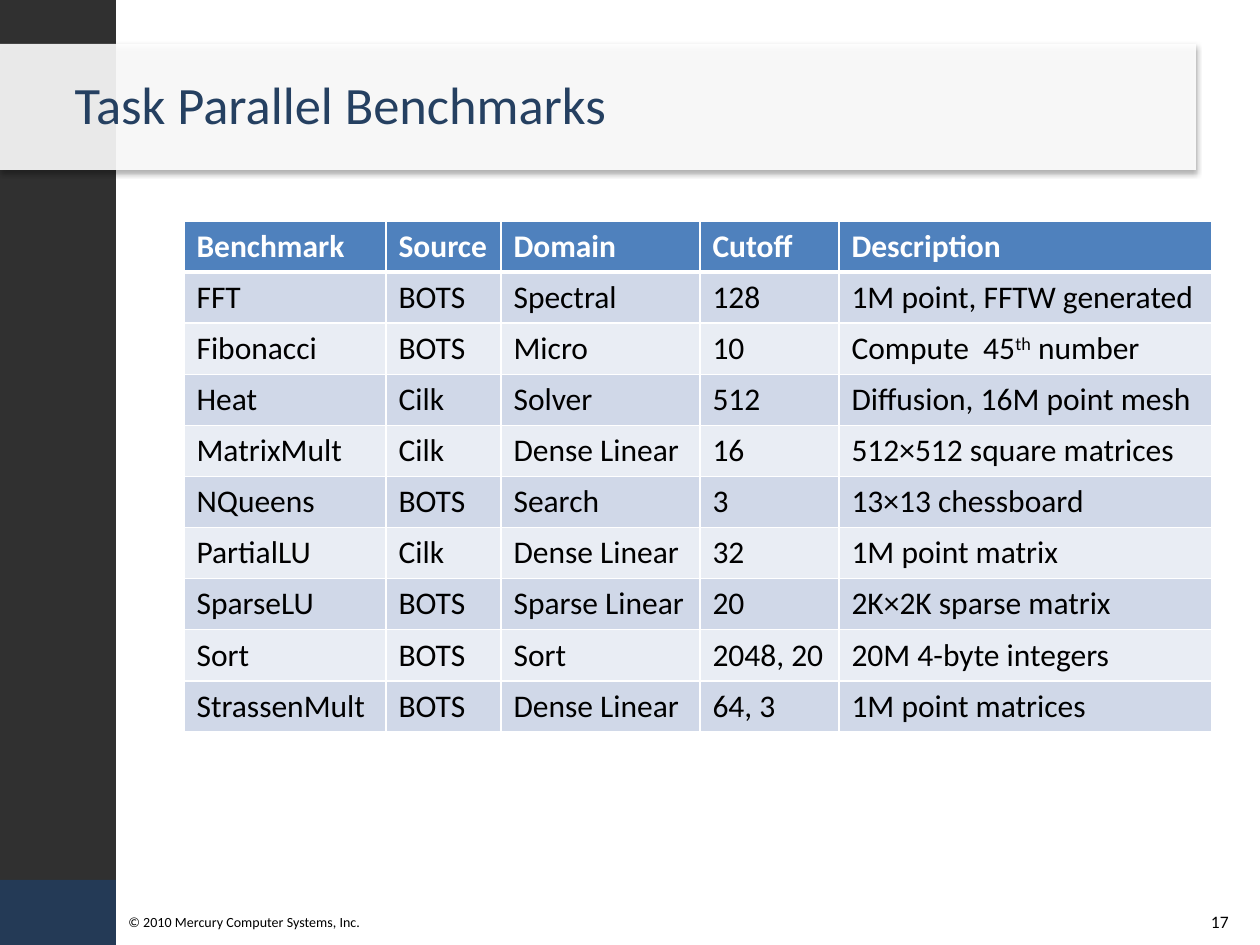
import lxml.etree
import pptx
import pptx.dml.color
import pptx.enum.shapes
import pptx.enum.text
import pptx.oxml.ns
import pptx.util

PX = 914400 / 126
FONT = "Calibri"
COLORS = {
    "white": "FFFFFF", "black": "000000", "sidebar": "303030", "corner": "243A56",
    "title": "254061", "header": "4F81BD", "odd": "D0D8E8", "even": "E9EDF4",
}
COLUMN_WIDTHS = [202, 115, 199, 139, 373]
ROW_HEIGHT = 51
SUPERSCRIPT = "th"
BENCHMARKS = [
    ["Benchmark", "Source", "Domain", "Cutoff", "Description"],
    ["FFT", "BOTS", "Spectral", "128", "1M point, FFTW generated"],
    ["Fibonacci", "BOTS", "Micro", "10", ["Compute  45", SUPERSCRIPT, " number"]],
    ["Heat", "Cilk", "Solver", "512", "Diffusion, 16M point mesh"],
    ["MatrixMult", "Cilk", "Dense Linear", "16", "512×512 square matrices"],
    ["NQueens", "BOTS", "Search", "3", "13×13 chessboard"],
    ["PartialLU", "Cilk", "Dense Linear", "32", "1M point matrix"],
    ["SparseLU", "BOTS", "Sparse Linear", "20", "2K×2K sparse matrix"],
    ["Sort", "BOTS", "Sort", "2048, 20", "20M 4-byte integers"],
    ["StrassenMult", "BOTS", "Dense Linear", "64, 3", "1M point matrices"],
]


def emu(*lengths):
    """Turn px lengths into EMU."""
    return [pptx.util.Emu(round(length * PX)) for length in lengths]


def rgb(name):
    """Look up a named colour."""
    return pptx.dml.color.RGBColor.from_string(COLORS[name])


def add_xml(parent, tag, **attributes):
    """Append a DrawingML element and return it."""
    return lxml.etree.SubElement(parent, pptx.oxml.ns.qn(tag), attributes)


def add_run(paragraph, text, size, color, bold=False):
    """Add one formatted run to a paragraph."""
    run = paragraph.add_run()
    run.text = text
    run.font.name = FONT
    run.font.size = pptx.util.Pt(size)
    run.font.bold = bold
    run.font.color.rgb = rgb(color)
    return run


def add_block(slide, box, color):
    """Add a plain filled rectangle."""
    block = slide.shapes.add_shape(
        pptx.enum.shapes.MSO_SHAPE.RECTANGLE, *emu(*box))
    block.shadow.inherit = False
    block.fill.solid()
    block.fill.fore_color.rgb = rgb(color)
    block.line.fill.background()
    return block


def add_label(slide, box, text, size, align):
    """Add a one-line text box."""
    frame = slide.shapes.add_textbox(*emu(*box)).text_frame
    frame.word_wrap = True
    frame.paragraphs[0].alignment = align
    add_run(frame.paragraphs[0], text, size, "black")


def add_sidebar(slide, box, corner_height):
    """Draw the dark sidebar with its blue corner at the foot."""
    left, top, width, height = box
    add_block(slide, box, "sidebar")
    add_block(slide, (left, top + height - corner_height, width, corner_height), "corner")


def add_title_band(slide, box, indent, text):
    """Draw the translucent shadowed band and set the title on it."""
    left, top, width, height = box
    band = add_block(slide, box, "white")
    fill_color = band.fill._xPr.find(".//" + pptx.oxml.ns.qn("a:srgbClr"))
    add_xml(fill_color, "a:alpha", val="90000")
    effects = band._element.spPr.find(pptx.oxml.ns.qn("a:effectLst"))
    shadow = add_xml(effects, "a:outerShdw", blurRad=str(pptx.util.Pt(3.1)),
                     dist=str(pptx.util.Pt(1.8)), dir="5400000",
                     algn="t", rotWithShape="0")
    add_xml(add_xml(shadow, "a:srgbClr", val=COLORS["black"]), "a:alpha", val="35000")

    title = slide.shapes.title
    title.left, title.top, title.width, title.height = emu(
        left + indent, top, 1108, height + 1)
    band._element.addnext(title._element)
    frame = title.text_frame
    frame.auto_size = pptx.enum.text.MSO_AUTO_SIZE.NONE
    frame.vertical_anchor = pptx.enum.text.MSO_ANCHOR.MIDDLE
    heading = frame.paragraphs[0]
    heading.alignment = pptx.enum.text.PP_ALIGN.LEFT
    heading.line_spacing = 0.9
    add_run(heading, text, 30, "title")


def format_cell(cell, content, row_index):
    """Fill, border and write one table cell."""
    is_header = row_index == 0
    properties = cell._tc.get_or_add_tcPr()
    widths = {"L": 1, "R": 1, "T": 3 if row_index == 1 else 1, "B": 3 if is_header else 1}
    for side, width in widths.items():
        border = add_xml(properties, "a:ln" + side, w=str(pptx.util.Pt(width)))
        add_xml(add_xml(border, "a:solidFill"), "a:srgbClr", val=COLORS["white"])
    cell.fill.solid()
    cell.fill.fore_color.rgb = rgb(
        "header" if is_header else "odd" if row_index % 2 else "even")
    pieces = content if isinstance(content, list) else [content]
    for piece in pieces:
        run = add_run(cell.text_frame.paragraphs[0], piece, 18,
                      "white" if is_header else "black", is_header)
        if piece == SUPERSCRIPT:
            run.font._element.set("baseline", "30000")


def add_benchmark_table(slide, left, top):
    """Build the benchmark table from its top-left corner."""
    box = emu(left, top, sum(COLUMN_WIDTHS), ROW_HEIGHT * len(BENCHMARKS))
    table = slide.shapes.add_table(len(BENCHMARKS), len(COLUMN_WIDTHS), *box).table
    table.horz_banding = False
    for column, width in zip(table.columns, emu(*COLUMN_WIDTHS)):
        column.width = width
    for row_index, (row, contents) in enumerate(zip(table.rows, BENCHMARKS)):
        row.height = emu(ROW_HEIGHT)[0]
        for cell, content in zip(row.cells, contents):
            format_cell(cell, content, row_index)


def add_footer(slide, box):
    """Place the copyright line and page number at the two ends of the footer."""
    left, top, width, height = box
    add_label(slide, (left, top + 2, 362, height - 2),
              "© 2010 Mercury Computer Systems, Inc.", 8, pptx.enum.text.PP_ALIGN.LEFT)
    number_width = 294
    add_label(slide, (left + width - number_width, top, number_width, height),
              "17", 10, pptx.enum.text.PP_ALIGN.RIGHT)


def main():
    """Build and save the slide."""
    deck = pptx.Presentation()
    deck.slide_width, deck.slide_height = emu(1260, 945)
    slide = deck.slides.add_slide(deck.slide_layouts.get_by_name("Title Only"))
    add_sidebar(slide, (0, 0, 116, 945), 65)
    add_title_band(slide, (0, 44, 1196, 126), 62, "Task Parallel Benchmarks")
    add_benchmark_table(slide, 184, 221)
    add_footer(slide, (116, 905, 1125, 50))
    deck.save("out.pptx")


if __name__ == "__main__":
    main()
